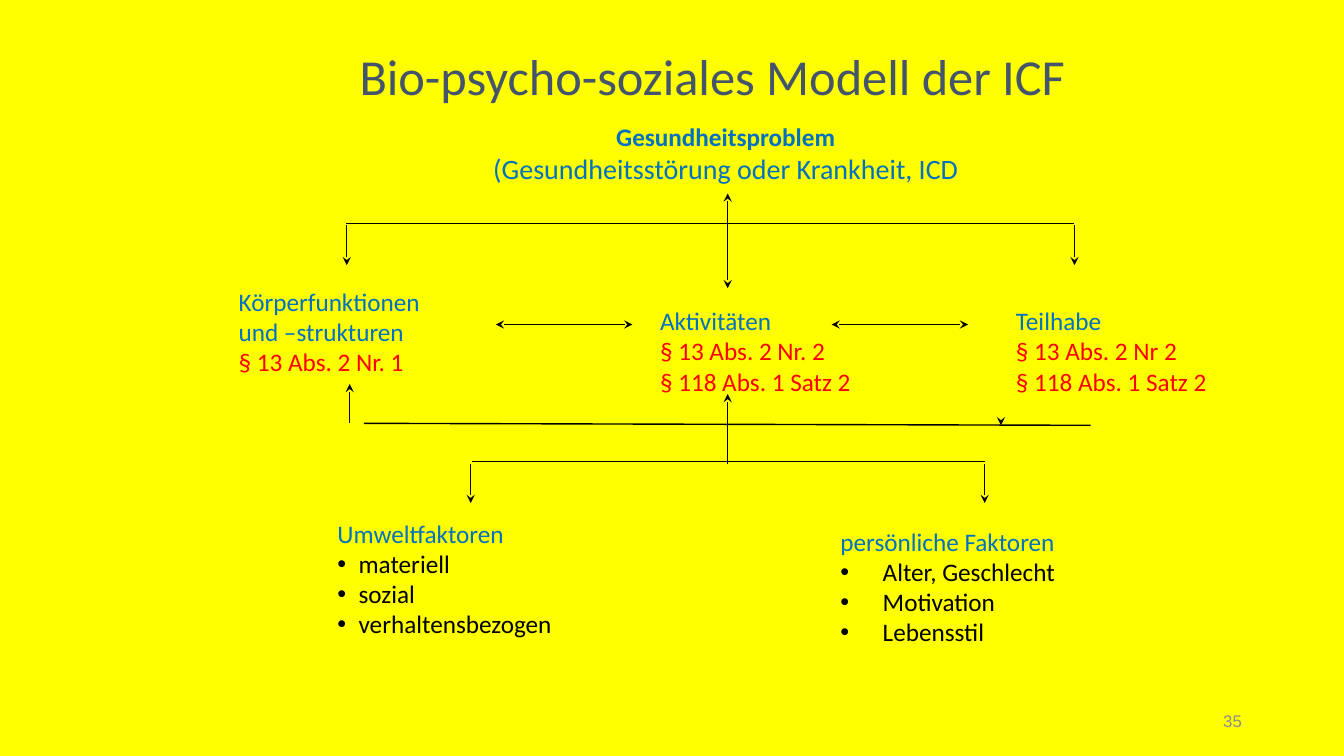
"""Builds the slide on the bio-psycho-social model of the ICF."""
from lxml import etree
from pptx import Presentation
from pptx.dml.color import RGBColor
from pptx.enum.shapes import MSO_CONNECTOR
from pptx.enum.text import MSO_ANCHOR, MSO_AUTO_SIZE, PP_ALIGN
from pptx.oxml.ns import qn
from pptx.util import Pt

STRAIGHT = MSO_CONNECTOR.STRAIGHT
TOP, MIDDLE = MSO_ANCHOR.TOP, MSO_ANCHOR.MIDDLE
LEFT, CENTER, RIGHT = PP_ALIGN.LEFT, PP_ALIGN.CENTER, PP_ALIGN.RIGHT
FIXED = MSO_AUTO_SIZE.NONE
COLORS = {
    "background": "FFFF00",
    "title": "44546A",
    "term": "0070C0",
    "law": "FF0000",
    "ink": "000000",
    "number": "8C8C8C",
}


def rgb(name):
    return RGBColor.from_string(COLORS[name])


def write(paragraph, text, color="term", size=18, font="Calibri", bold=False,
          align=LEFT, indent=0, bullet=False):
    run = paragraph.add_run()
    run.text = text
    run.font.name, run.font.size, run.font.bold = font, Pt(size), bold
    run.font.color.rgb = rgb(color)
    paragraph.alignment = align
    if indent:
        properties = paragraph._p.get_or_add_pPr()
        properties.set("marL", str(Pt(indent)))
        properties.set("indent", str(-Pt(indent)))
        if bullet:
            etree.SubElement(properties, qn("a:buFont")).set("typeface", "Arial")
            etree.SubElement(properties, qn("a:buChar")).set("char", "•")


class ModelSlide:
    def __init__(self, presentation):
        self.slide = presentation.slides.add_slide(presentation.slide_layouts[5])
        self.line_width = Pt(1)
        fill = self.slide.background.fill
        fill.solid()
        fill.fore_color.rgb = rgb("background")

    def title(self, text, left, top, width, height, inset):
        heading = self.slide.shapes.title
        heading.left, heading.top = Pt(left), Pt(top)
        heading.width, heading.height = Pt(width), Pt(height)
        frame = heading.text_frame
        frame.auto_size, frame.vertical_anchor = FIXED, MIDDLE
        frame.margin_left = Pt(inset)
        write(frame.paragraphs[0], text, color="title", size=36)

    def text(self, lines, left, top, width, height, anchor=TOP):
        box = self.slide.shapes.add_textbox(Pt(left), Pt(top), Pt(width), Pt(height))
        frame = box.text_frame
        frame.word_wrap, frame.vertical_anchor = True, anchor
        for index, (wording, style) in enumerate(lines):
            paragraph = frame.add_paragraph() if index else frame.paragraphs[0]
            write(paragraph, wording, **style)

    def component(self, terms, laws, left, top):
        lines = [(term, {}) for term in terms]
        lines += [(law, {"color": "law"}) for law in laws]
        self.text(lines, left, top, 154, 72.7)

    def factors(self, heading, examples, left, top, indent):
        lines = [(heading, {"indent": indent})]
        lines += [(example, {"color": "ink", "indent": indent, "bullet": True})
                  for example in examples]
        self.text(lines, left, top, 221, 94.3)

    def line(self, x1, y1, x2, y2, arrows=()):
        connector = self.slide.shapes.add_connector(
            STRAIGHT, Pt(x1), Pt(y1), Pt(x2), Pt(y2))
        connector.line.width = self.line_width
        connector.line.color.rgb = rgb("ink")
        outline = connector.line._get_or_add_ln()
        for end in arrows:
            etree.SubElement(outline, qn(f"a:{end}")).set("type", "stealth")
        etree.SubElement(connector._element.spPr, qn("a:effectLst"))


def main():
    presentation = Presentation()
    presentation.slide_width, presentation.slide_height = Pt(960), Pt(540)
    model = ModelSlide(presentation)
    start, both = ("headEnd",), ("headEnd", "tailEnd")

    model.title("Bio-psycho-soziales Modell der ICF", 208.8, 27.4, 612, 53.3, 48)
    model.text([
        ("Gesundheitsproblem", {"bold": True, "align": CENTER}),
        ("(Gesundheitsstörung oder Krankheit, ICD", {"size": 20, "align": CENTER}),
    ], 322.6, 82.8, 391.7, 53.3)

    model.component(["Körperfunktionen", "und –strukturen"],
                    ["§ 13 Abs. 2 Nr. 1"], 163.4, 200.9)
    model.component(["Aktivitäten"],
                    ["§ 13 Abs. 2 Nr. 2", "§ 118 Abs. 1 Satz 2"], 464.4, 214.6)
    model.component(["Teilhabe"],
                    ["§ 13 Abs. 2 Nr 2", "§ 118 Abs. 1 Satz 2"], 718.6, 214.6)

    model.factors("Umweltfaktoren", ["materiell", "sozial", "verhaltensbezogen"],
                  234, 366.5, 15.1)
    model.factors("persönliche Faktoren",
                  ["Alter, Geschlecht", "Motivation", "Lebensstil"],
                  593.3, 372.2, 30.2)

    center, upper, middle, lower = 519.8, 159.8, 302.4, 329.8
    for exchange in (354.2, 594):
        model.line(exchange, 231.8, exchange + 97.5, 231.8, both)

    model.line(247, upper, 766.8, upper)
    model.line(center, 138.2, center, 205.9, both)
    for branch in (247.7, 767.5):
        model.line(branch, 189.4, branch, 160.6, start)

    model.line(259.9, middle, 779, 303.8)
    model.line(249.8, 274.3, 249.8, middle, start)
    model.line(715, 303.8, 715, middle, start)

    model.line(337, lower, 703.4, lower)
    model.line(center, 281.5, center, 331.2, start)
    for branch in (336.2, 703.4):
        model.line(branch, 359.3, branch, 331.2, start)

    model.text([("35", {"color": "number", "size": 12, "font": "Arial",
                        "align": RIGHT})], 678.2, 500.4, 216, 28.8, anchor=MIDDLE)
    presentation.save("out.pptx")


if __name__ == "__main__":
    main()
